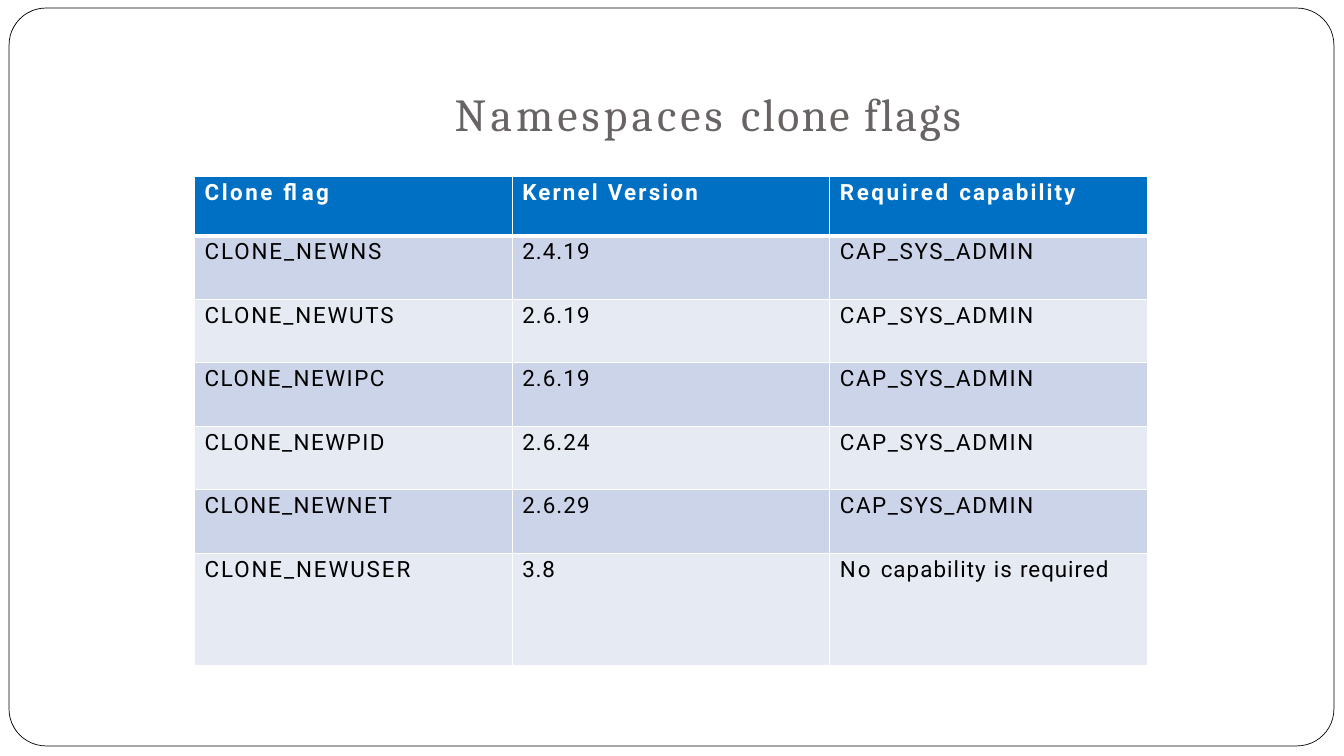
import pptx
import pptx.dml.color
import pptx.enum.shapes
import pptx.enum.text
import pptx.oxml.ns
import pptx.util
from lxml import etree

EMU_PER_PX = 9144
WHITE = pptx.dml.color.RGBColor(0xFF, 0xFF, 0xFF)
BLACK = pptx.dml.color.RGBColor(0x00, 0x00, 0x00)
TITLE_GRAY = pptx.dml.color.RGBColor(0x69, 0x64, 0x64)
HEADER_BLUE = pptx.dml.color.RGBColor(0x00, 0x70, 0xC4)
BAND_DARK = pptx.dml.color.RGBColor(0xCC, 0xD4, 0xE9)
BAND_LIGHT = pptx.dml.color.RGBColor(0xE6, 0xEA, 0xF3)

TITLE = [("Namespaces ", 2.9), ("clone ", 1.6), ("flags", 1.7)]
HEADER = [
    [("Clone ", 1.8), ("flag", 1.7)],
    [("Kernel Version", 1.6)],
    [("Required ", 1.9), ("capability", 1.5)],
]
ADMIN = [("CAP_SYS_ADMIN", 1.2)]
NO_CAPABILITY = [("No ", 1.6), ("capability ", 0.8), ("is ", 0.9), ("required", 0.7)]
CLONE_FLAGS = [
    [[("CLONE_NEWNS", 1.4)], [("2.4.19", 0.8)], ADMIN],
    [[("CLONE_NEWUTS", 1.3)], [("2.6.19", 0.8)], ADMIN],
    [[("CLONE_NEWIPC", 1.1)], [("2.6.19", 0.8)], ADMIN],
    [[("CLONE_NEWPID", 1.1)], [("2.6.24", 0.8)], ADMIN],
    [[("CLONE_NEWNET", 1.1)], [("2.6.29", 0.8)], ADMIN],
    [[("CLONE_NEWUSER", 1.4)], [("3.8", 0.6)], NO_CAPABILITY],
]
ROW_HEIGHTS = [59, 63, 63, 63, 63, 63, 111]
COLUMN_WIDTH = 315


def px(length):
    """Turn px into EMU."""
    return pptx.util.Emu(length * EMU_PER_PX)


def write_runs(paragraph, runs, font, size, color, bold, indent, before):
    """Write spaced runs into an indented paragraph."""
    paragraph.space_before = pptx.util.Pt(before)
    paragraph._p.get_or_add_pPr().set("marL", str(px(indent)))
    for text, spacing in runs:
        run = paragraph.add_run()
        run.text = text
        run.font.name = font
        run.font.size = pptx.util.Pt(size)
        run.font.color.rgb = color
        run.font.bold = bold
        run.font._element.set("spc", str(round(spacing * 100)))


def set_border(cell, side, width):
    """Draw one white border of a cell."""
    line = etree.SubElement(
        cell._tc.get_or_add_tcPr(),
        pptx.oxml.ns.qn(f"a:ln{side}"),
        w=str(pptx.util.Pt(width)),
    )
    fill = etree.SubElement(line, pptx.oxml.ns.qn("a:solidFill"))
    etree.SubElement(fill, pptx.oxml.ns.qn("a:srgbClr"), val=str(WHITE))


def add_frame(slide):
    """Add the rounded outline around the slide."""
    frame = slide.shapes.add_shape(
        pptx.enum.shapes.MSO_SHAPE.ROUNDED_RECTANGLE, px(9), px(8), px(1314), px(732)
    )
    frame.adjustments[0] = 0.05
    frame.shadow.inherit = False
    frame.fill.solid()
    frame.fill.fore_color.rgb = WHITE
    frame.line.color.rgb = BLACK
    frame.line.width = pptx.util.Pt(0.5)


def add_title(slide):
    """Add the title, resting on the bottom of its box."""
    title = slide.shapes.add_textbox(px(287), px(51), px(1029), px(89)).text_frame
    title.word_wrap = True
    title.vertical_anchor = pptx.enum.text.MSO_ANCHOR.BOTTOM
    title.margin_left = title.margin_right = title.margin_bottom = 0
    title.margin_top = px(34)
    write_runs(title.paragraphs[0], TITLE, "Cambria", 32.7, TITLE_GRAY, False, 164, 0.9)


def fill_cell(cell, runs, row):
    """Style and write one cell of the given row."""
    is_header = row == 0
    cell.margin_left = cell.margin_right = cell.margin_bottom = 0
    cell.margin_top = px(3)
    widths = {"L": 1, "R": 1, "T": 3 if row == 1 else 1, "B": 3 if is_header else 1}
    for side, width in widths.items():
        set_border(cell, side, width)
    cell.fill.solid()
    band = BAND_DARK if row % 2 else BAND_LIGHT
    cell.fill.fore_color.rgb = HEADER_BLUE if is_header else band
    color = WHITE if is_header else BLACK
    paragraph = cell.text_frame.paragraphs[0]
    write_runs(paragraph, runs, "Roboto", 16, color, is_header, 10, 2.3)


def add_flag_table(slide):
    """Add the table of clone flags."""
    rows = [HEADER] + CLONE_FLAGS
    table = slide.shapes.add_table(
        len(rows), len(HEADER), px(193), px(175),
        px(COLUMN_WIDTH * len(HEADER)), px(sum(ROW_HEIGHTS)),
    ).table
    table.first_row = table.horz_banding = False
    for column in table.columns:
        column.width = px(COLUMN_WIDTH)
    for row, (height, entries) in enumerate(zip(ROW_HEIGHTS, rows)):
        table.rows[row].height = px(height)
        for column, runs in enumerate(entries):
            fill_cell(table.cell(row, column), runs, row)


def main():
    """Build and save the slide."""
    deck = pptx.Presentation()
    deck.slide_width, deck.slide_height = px(1333), px(750)
    slide = deck.slides.add_slide(deck.slide_layouts[6])
    add_frame(slide)
    add_title(slide)
    add_flag_table(slide)
    deck.save("out.pptx")


if __name__ == "__main__":
    main()
